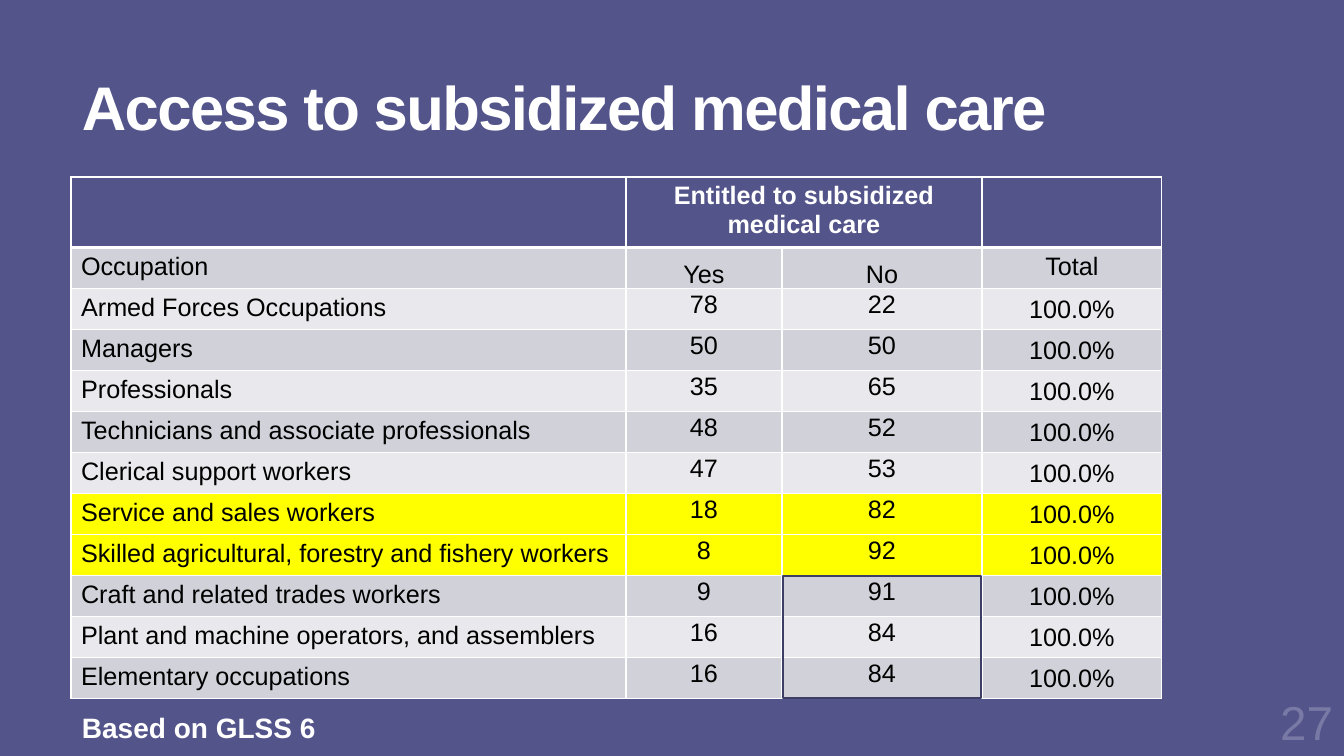
import lxml.etree
import pptx
import pptx.dml.color
import pptx.enum.shapes
import pptx.enum.text
import pptx.oxml.ns
import pptx.util

RGBColor = pptx.dml.color.RGBColor
Align = pptx.enum.text.PP_ALIGN
Anchor = pptx.enum.text.MSO_ANCHOR

PURPLE = RGBColor(0x53, 0x54, 0x8A)
DARK_PURPLE = RGBColor(0x3D, 0x3E, 0x66)
MUTED_PURPLE = RGBColor(0x79, 0x79, 0xA5)
WHITE = RGBColor(0xFF, 0xFF, 0xFF)
BLACK = RGBColor(0, 0, 0)
GREY = RGBColor(0xD1, 0xD1, 0xDA)
PALE_GREY = RGBColor(0xE9, 0xE9, 0xED)
YELLOW = RGBColor(0xFF, 0xFF, 0)

OCCUPATIONS = [
    ("Armed Forces Occupations", 78, 22),
    ("Managers", 50, 50),
    ("Professionals", 35, 65),
    ("Technicians and associate professionals", 48, 52),
    ("Clerical support workers", 47, 53),
    ("Service and sales workers", 18, 82),
    ("Skilled agricultural, forestry and fishery workers", 8, 92),
    ("Craft and related trades workers", 9, 91),
    ("Plant and machine operators, and assemblers", 16, 84),
    ("Elementary occupations", 16, 84),
]
HIGHLIGHTED_ROWS = (7, 8)


def px(length):
    return pptx.util.Emu(round(length * 914400 / 100.8))


class SlideBuilder:
    font = "Arial"

    def __init__(self, presentation):
        self.slide = presentation.slides.add_slide(presentation.slide_layouts[6])
        background = self.slide.background.fill
        background.solid()
        background.fore_color.rgb = PURPLE

    def style(self, paragraph, size, color, bold=False, align=Align.LEFT, leading=1.0):
        paragraph.alignment = align
        paragraph.line_spacing = leading
        for run in paragraph.runs:
            run.font.name = self.font
            run.font.size = pptx.util.Pt(size)
            run.font.bold = bold
            run.font.color.rgb = color

    def text(self, box, words, size, color, bold=False, align=Align.LEFT,
             leading=1.0, wrap=True, spacing=0):
        frame = self.slide.shapes.add_textbox(*map(px, box)).text_frame
        frame.word_wrap = wrap
        frame.vertical_anchor = Anchor.MIDDLE
        frame.text = words
        paragraph = frame.paragraphs[0]
        self.style(paragraph, size, color, bold, align, leading)
        if spacing:
            paragraph.runs[0].font._element.set("spc", str(spacing))

    def outline(self, box, color, width):
        rectangle = self.slide.shapes.add_shape(
            pptx.enum.shapes.MSO_SHAPE.RECTANGLE, *map(px, box))
        rectangle.shadow.inherit = False
        rectangle.fill.background()
        rectangle.line.color.rgb = color
        rectangle.line.width = pptx.util.Pt(width)

    def table(self, left, top, widths, heights):
        table = self.slide.shapes.add_table(
            len(heights), len(widths), px(left), px(top),
            px(sum(widths)), px(sum(heights))).table
        for column, width in zip(table.columns, widths):
            column.width = px(width)
        for row, height in zip(table.rows, heights):
            row.height = px(height)
        return table

    def cell(self, cell, words, fill, color=BLACK, bold=False, align=Align.CENTER,
             anchor=Anchor.TOP, side_inset=None, top_line=1, bottom_line=1):
        cell.fill.solid()
        cell.fill.fore_color.rgb = fill
        cell.vertical_anchor = anchor
        leading = 1.0
        if side_inset is not None:
            cell.margin_left = cell.margin_right = px(side_inset)
            cell.margin_top = cell.margin_bottom = 0
            leading = 1.07
        if words:
            cell.text_frame.text = words
            self.style(cell.text_frame.paragraphs[0], 18, color, bold, align, leading)
        self.borders(cell, {"lnL": 1, "lnR": 1, "lnT": top_line, "lnB": bottom_line})

    def borders(self, cell, widths):
        qn = pptx.oxml.ns.qn
        properties = cell._tc.get_or_add_tcPr()
        for position, (edge, width) in enumerate(widths.items()):
            line = lxml.etree.Element(qn("a:" + edge), w=str(pptx.util.Pt(width)))
            fill = lxml.etree.SubElement(line, qn("a:solidFill"))
            lxml.etree.SubElement(fill, qn("a:srgbClr"), val=str(WHITE))
            properties.insert(position, line)


def add_access_table(builder):
    table = builder.table(71, 177, [555, 156, 200, 180], [66] + [41] * 11)

    table.cell(0, 1).merge(table.cell(0, 2))
    headings = ["", "Entitled to subsidized medical care", "", ""]
    for column, heading in enumerate(headings):
        builder.cell(table.cell(0, column), heading, PURPLE, WHITE, True, bottom_line=3)

    subheadings = ["Occupation", "Yes", "No", "Total"]
    for column, subheading in enumerate(subheadings):
        answer = column in (1, 2)
        builder.cell(table.cell(1, column), subheading, GREY,
                     align=Align.CENTER if column else Align.LEFT,
                     anchor=Anchor.BOTTOM if answer else Anchor.TOP,
                     side_inset=6 if answer else None, top_line=3)

    for row, (occupation, yes, no) in enumerate(OCCUPATIONS, start=2):
        fill = GREY if row % 2 else PALE_GREY
        if row in HIGHLIGHTED_ROWS:
            fill = YELLOW
        builder.cell(table.cell(row, 0), occupation, fill, align=Align.LEFT)
        for column, share in enumerate((yes, no), start=1):
            builder.cell(table.cell(row, column), str(share), fill, side_inset=7)
        builder.cell(table.cell(row, 3), "100.0%", fill,
                     anchor=Anchor.MIDDLE, side_inset=6)


def main():
    presentation = pptx.Presentation()
    presentation.slide_width = px(1344)
    presentation.slide_height = px(756)
    builder = SlideBuilder(presentation)
    builder.text((72, 21, 1187, 182), "Access to subsidized medical care", 44, WHITE,
                 bold=True, leading=0.85, spacing=-120)
    add_access_table(builder)
    builder.outline((783, 576, 198, 122), DARK_PURPLE, 1.5)
    builder.text((72, 705, 256, 44), "Based on GLSS 6", 20, WHITE, bold=True, wrap=False)
    builder.text((1243, 692, 100, 60), "27", 34, MUTED_PURPLE, align=Align.RIGHT)
    presentation.save("out.pptx")


if __name__ == "__main__":
    main()
